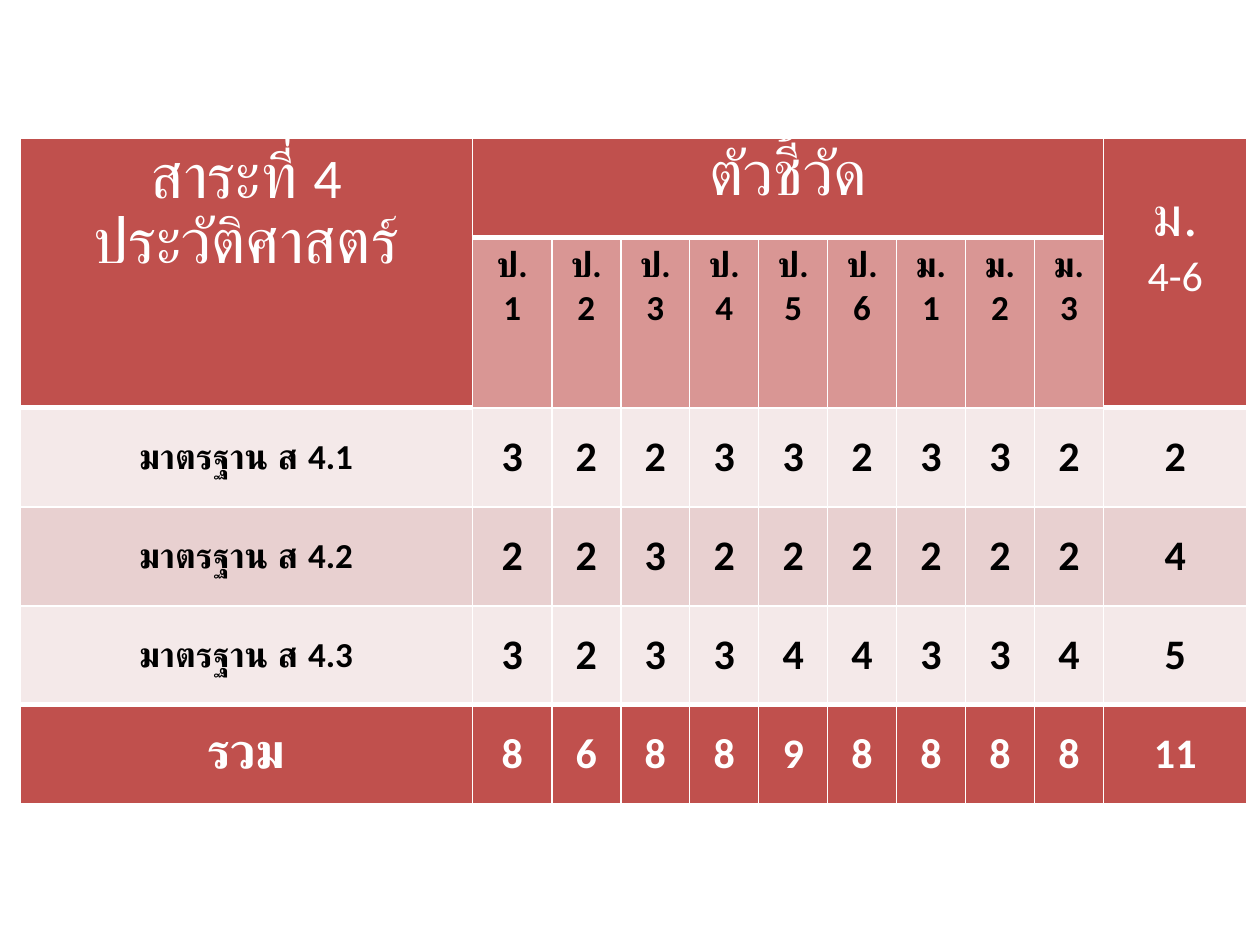
from pptx import Presentation
from pptx.dml.color import RGBColor
from pptx.enum.text import MSO_ANCHOR, PP_ALIGN
from pptx.oxml.ns import qn
from pptx.util import Inches, Pt
from lxml.etree import SubElement

RED = RGBColor(0xC0, 0x50, 0x4D)
ROSE = RGBColor(0xD9, 0x96, 0x94)
PALE = RGBColor(0xF4, 0xE9, 0xE9)
PINK = RGBColor(0xE8, 0xD0, 0xD0)
WHITE = RGBColor(0xFF, 0xFF, 0xFF)
BLACK = RGBColor(0, 0, 0)

GRADES = ["ป.1", "ป.2", "ป.3", "ป.4", "ป.5", "ป.6", "ม.1", "ม.2", "ม.3"]
ROWS = [
    ("มาตรฐาน ส 4.1", [3, 2, 2, 3, 3, 2, 3, 3, 2, 2], PALE),
    ("มาตรฐาน ส 4.2", [2, 2, 3, 2, 2, 2, 2, 2, 2, 4], PINK),
    ("มาตรฐาน ส 4.3", [3, 2, 3, 3, 4, 4, 3, 3, 4, 5], PALE),
    ("รวม", [8, 6, 8, 8, 9, 8, 8, 8, 8, 11], RED),
]


def edge(cell, top=1, bottom=1):
    props = cell._tc.get_or_add_tcPr()
    for side, width in (("L", 1), ("R", 1), ("T", top), ("B", bottom)):
        line = SubElement(props, qn(f"a:ln{side}"), w=str(Pt(width)))
        fill = SubElement(line, qn("a:solidFill"))
        SubElement(fill, qn("a:srgbClr"), val=str(WHITE))


def put(cell, lines, fill, color, bold=True, top=1, bottom=1):
    edge(cell, top, bottom)
    cell.fill.solid()
    cell.fill.fore_color.rgb = fill
    frame = cell.text_frame
    for i, parts in enumerate(lines):
        para = frame.paragraphs[0] if i == 0 else frame.add_paragraph()
        para.alignment = PP_ALIGN.CENTER
        for text, size in parts:
            run = para.add_run()
            run.text = text
            run.font.name = "Calibri"
            run.font.size = Pt(size)
            run.font.bold = bold
            run.font.color.rgb = color


def draw_head(table):
    last = len(GRADES) + 1
    table.cell(0, 0).merge(table.cell(1, 0))
    table.cell(0, 1).merge(table.cell(0, last - 1))
    table.cell(0, last).merge(table.cell(1, last))
    heads = {
        0: [[("สาระที่ ", 36), ("4", 32)], [("ประวัติศาสตร์", 36)]],
        1: [[("ตัวชี้วัด", 36)]],
        last: [[("ม.", 32)], [("4-6", 24)]],
    }
    for col, lines in heads.items():
        put(table.cell(0, col), lines, RED, WHITE, bold=False, bottom=3)
    table.cell(0, last).margin_top = Inches(0.35)
    for col, grade in enumerate(GRADES, 1):
        lines = [grade[:2], grade[2:]] if col == 1 else [grade]
        put(table.cell(1, col), [[(line, 20)] for line in lines], ROSE, BLACK)


def draw_body(table):
    for row, (label, counts, fill) in enumerate(ROWS, 2):
        total = fill == RED
        color = WHITE if total else BLACK
        for col, value in enumerate([label, *counts]):
            size = 24 if col else 28 if total else 20
            cell = table.cell(row, col)
            put(cell, [[(str(value), size)]], fill, color, top=3 if total else 1)
            cell.vertical_anchor = MSO_ANCHOR.MIDDLE


def draw_table(slide, left, top, width, height):
    count = len(GRADES) + 2
    table = slide.shapes.add_table(
        len(ROWS) + 2, count, left, top, width, height
    ).table
    label, first, final = Inches(3.59), Inches(0.63), Inches(1.14)
    grade = (width - label - first - final) // (count - 3)
    widths = [label, first] + [grade] * (count - 3) + [final]
    for col, size in zip(table.columns, widths):
        col.width = size
    tall = Inches(1.35)
    for i, row in enumerate(table.rows):
        row.height = tall if i == 1 else (height - tall) // (len(ROWS) + 1)
    draw_head(table)
    draw_body(table)


def main():
    deck = Presentation()
    deck.slide_width, deck.slide_height = Inches(10), Inches(7.5)
    slide = deck.slides.add_slide(deck.slide_layouts[6])
    draw_table(slide, Inches(0.16), Inches(1.1), Inches(9.74), Inches(5.28))
    deck.save("out.pptx")


if __name__ == "__main__":
    main()
